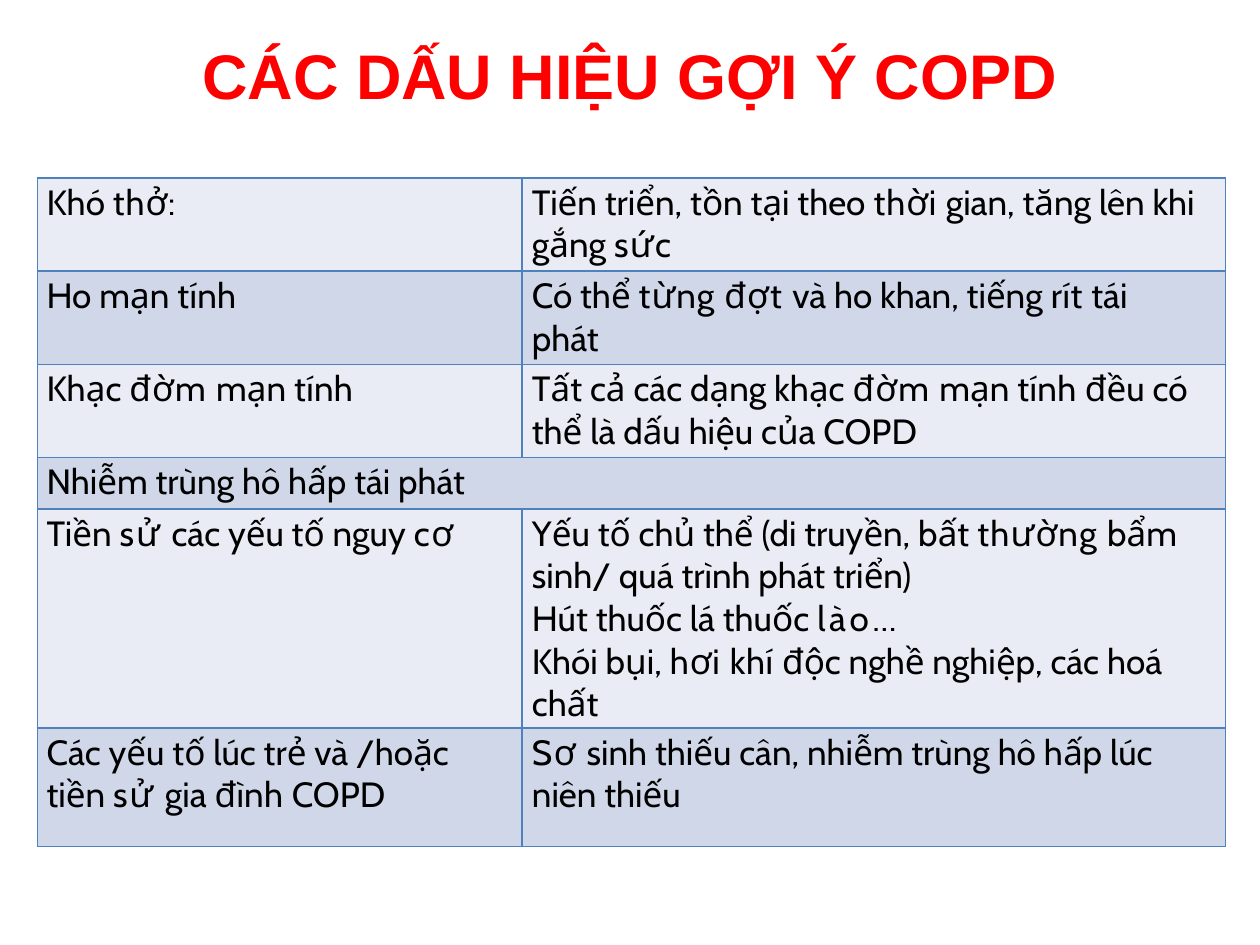
from itertools import groupby

from pptx import Presentation
from pptx.dml.color import RGBColor as Rgb
from pptx.oxml import parse_xml
from pptx.oxml.ns import nsdecls
from pptx.util import Pt

TITLE = "CÁC DẤU HIỆU GỢI Ý COPD"
# Sign paragraphs, detail paragraphs (None: sign spans the row), height, right inset
SIGNS = [
    (["Khó thở:"],
     ["Tiến triển, tồn tại theo thời gian, tăng lên khi gắng sức"], 53.3, 0),
    (["Ho mạn tính"],
     ["Có thể từng đợt và ho khan, tiếng rít tái phát"], 53.3, 36),
    (["Khạc đờm mạn tính"],
     ["Tất cả các dạng khạc đờm mạn tính đều có thể là dấu hiệu của COPD"], 53.3, 0),
    (["Nhiễm trùng hô hấp tái phát"], None, 29.4, 0),
    (["Tiền sử các yếu tố nguy cơ"],
     ["Yếu tố chủ thể (di truyền, bất thường bẩm",
      "sinh/ quá trình phát triển)",
      "Hút thuốc lá thuốc lào…",
      "Khói bụi, hơi khí độc nghề nghiệp, các hoá chất"], 125.1, 0),
    (["Các yếu tố lúc trẻ và /hoặc", "tiền sử gia đình COPD"],
     ["Sơ sinh thiếu cân, nhiễm trùng hô hấp lúc", "niên thiếu"], 67.7, 0),
]
# Letter spacing of single words, in points
WORD_SPACING = {"thở:": 0.5, "thời": 0.5, "sức": 0.8, "từng": 0.6, "đợt": 0.7,
                "đờm": 0.7, "tính": 0.2, "rít": 0.3, "sử": 1.1, "cơ": 1,
                "thường": 0.7, "lào…": 2.1, "hơi": 0.6, "khí": 0.3, "Sơ": 0.9,
                "đình": 0.2}
COLORS = {"title": "FF0000", "text": "000000", "border": "4F81BC",
          "odd": "E9ECF4", "even": "D0D7E8"}
TITLE_FONT = {"name": "Arial", "size": Pt(36), "bold": True}
CELL_FONT = {"name": "Cabin", "size": Pt(20), "bold": False}
COLUMN_WIDTHS = (277, 402)
INSETS = (5.2, 5.6)


def set_all(target, values):
    for name, value in values.items():
        setattr(target, name, value)


def add_words(paragraph, text, font, color):
    """Write text, one run for each stretch of equal letter spacing."""
    words = text.split(" ")
    spaced = [(word + " ", WORD_SPACING.get(word, 0)) for word in words[:-1]]
    spaced.append((words[-1], WORD_SPACING.get(words[-1], 0)))
    for spacing, group in groupby(spaced, key=lambda item: item[1]):
        run = paragraph.add_run()
        run.text = "".join(word for word, _ in group)
        set_all(run.font, font)
        run.font.color.rgb = Rgb.from_string(COLORS[color])
        if spacing:
            run.font._element.set("spc", str(round(spacing * 100)))


def add_borders(cell):
    properties = cell._tc.get_or_add_tcPr()
    for position, side in enumerate(("lnL", "lnR", "lnT", "lnB")):
        properties.insert(position, parse_xml(
            f'<a:{side} {nsdecls("a")} w="{Pt(1)}"><a:solidFill>'
            f'<a:srgbClr val="{COLORS["border"]}"/></a:solidFill></a:{side}>'))


def fill_cell(cell, lines, inset, right, shade):
    set_all(cell, {"margin_left": Pt(inset), "margin_right": Pt(right),
                   "margin_top": Pt(2), "margin_bottom": 0})
    cell.fill.solid()
    cell.fill.fore_color.rgb = Rgb.from_string(COLORS[shade])
    add_borders(cell)
    frame = cell.text_frame
    for index, line in enumerate(lines):
        paragraph = frame.add_paragraph() if index else frame.paragraphs[0]
        paragraph.space_before = Pt(0 if index else 2.2)
        add_words(paragraph, line, CELL_FONT, "text")


presentation = Presentation()
set_all(presentation, {"slide_width": Pt(720), "slide_height": Pt(540)})
slide = presentation.slides.add_slide(presentation.slide_layouts[6])

# Title
title = slide.shapes.add_textbox(Pt(114.5), Pt(20), Pt(491), Pt(45.4)).text_frame
set_all(title, {"word_wrap": True, "margin_left": Pt(1), "margin_right": 0,
                "margin_top": Pt(1), "margin_bottom": 0})
title.paragraphs[0].space_before = Pt(1)
add_words(title.paragraphs[0], TITLE, TITLE_FONT, "title")

# Table of signs
table = slide.shapes.add_table(
    len(SIGNS), 2, Pt(21.4), Pt(101.6), Pt(sum(COLUMN_WIDTHS)),
    Pt(sum(height for _, _, height, _ in SIGNS))).table
set_all(table, {"first_row": False, "horz_banding": False})
for column, width in zip(table.columns, COLUMN_WIDTHS):
    column.width = Pt(width)
for row, (sign, detail, height, right) in enumerate(SIGNS):
    table.rows[row].height = Pt(height)
    shade = "even" if row % 2 else "odd"
    for column, lines in enumerate((sign, detail or [])):
        fill_cell(table.cell(row, column), lines, INSETS[column],
                  right if column else 0, shade)
    if detail is None:
        table.cell(row, 0).merge(table.cell(row, 1))

presentation.save("out.pptx")
